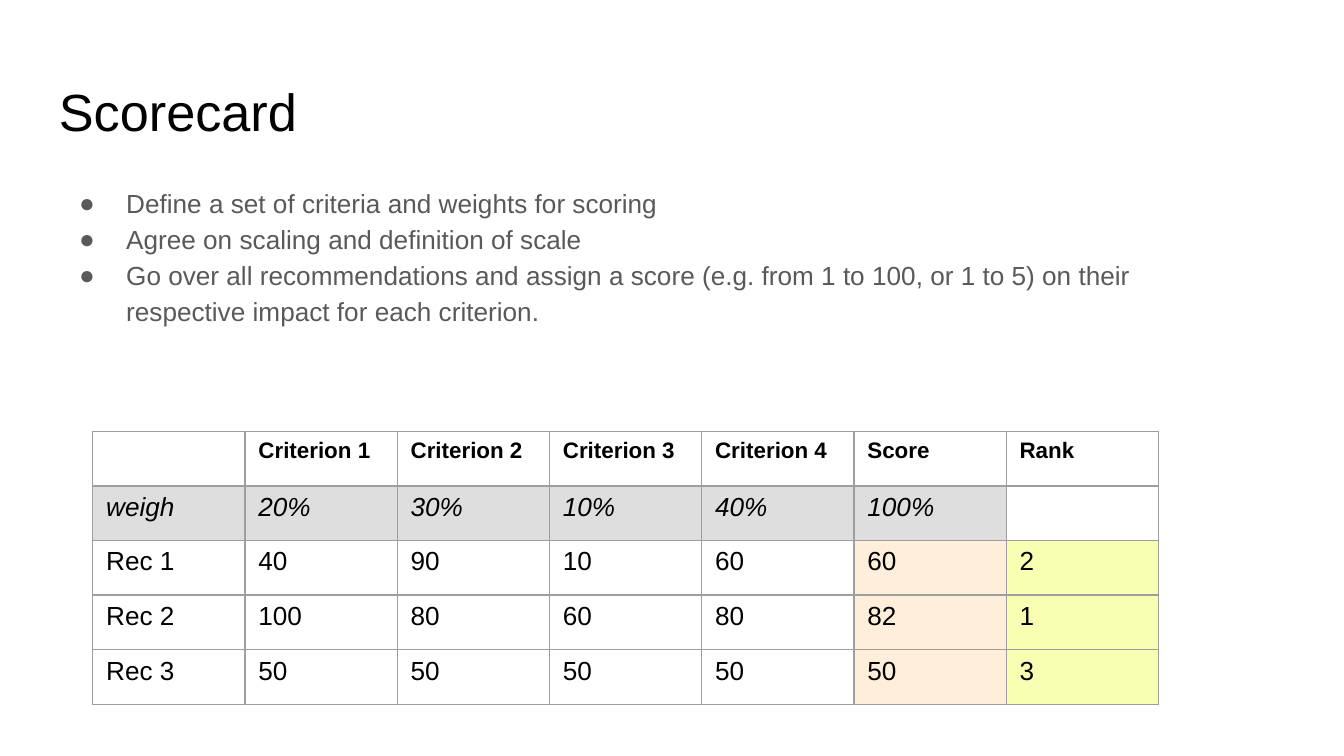
from dataclasses import dataclass

import pptx
import pptx.dml.color
import pptx.enum.text
import pptx.oxml
import pptx.oxml.ns
import pptx.text.text
import pptx.util

BLACK = pptx.dml.color.RGBColor(0x00, 0x00, 0x00)
BODY_GRAY = pptx.dml.color.RGBColor(0x59, 0x59, 0x59)
WEIGHT_GRAY = pptx.dml.color.RGBColor(0xDE, 0xDE, 0xDE)
SCORE_PEACH = pptx.dml.color.RGBColor(0xFF, 0xEE, 0xD9)
RANK_YELLOW = pptx.dml.color.RGBColor(0xF8, 0xFF, 0xB3)
BORDER_GRAY = pptx.dml.color.RGBColor(0x9E, 0x9E, 0x9E)

SCORE_COLUMN, RANK_COLUMN = 5, 6


@dataclass(frozen=True)
class TextStyle:
    size: float
    color: pptx.dml.color.RGBColor = BLACK
    bold: bool = False
    italic: bool = False


@dataclass(frozen=True)
class ScoreRow:
    values: tuple[str, ...]
    style: TextStyle
    fills: dict[int, pptx.dml.color.RGBColor]


TITLE_STYLE = TextStyle(28)
BULLET_STYLE = TextStyle(14, BODY_GRAY)
HEADER_STYLE = TextStyle(12, bold=True)
WEIGHT_STYLE = TextStyle(14, italic=True)
SCORE_STYLE = TextStyle(14)
RESULT_FILLS = {SCORE_COLUMN: SCORE_PEACH, RANK_COLUMN: RANK_YELLOW}

GUIDELINES = (
    "Define a set of criteria and weights for scoring",
    "Agree on scaling and definition of scale",
    "Go over all recommendations and assign a score (e.g. from 1 to 100, or 1 to 5) "
    "on their respective impact for each criterion.",
)
SCORECARD = (
    ScoreRow(("", "Criterion 1", "Criterion 2", "Criterion 3", "Criterion 4", "Score", "Rank"),
             HEADER_STYLE, {}),
    ScoreRow(("weigh", "20%", "30%", "10%", "40%", "100%", ""),
             WEIGHT_STYLE, dict.fromkeys(range(RANK_COLUMN), WEIGHT_GRAY)),
    ScoreRow(("Rec 1", "40", "90", "10", "60", "60", "2"), SCORE_STYLE, RESULT_FILLS),
    ScoreRow(("Rec 2", "100", "80", "60", "80", "82", "1"), SCORE_STYLE, RESULT_FILLS),
    ScoreRow(("Rec 3", "50", "50", "50", "50", "50", "3"), SCORE_STYLE, RESULT_FILLS),
)


def apply_style(font: pptx.text.text.Font, style: TextStyle) -> None:
    formats = {"name": "Arial", "size": pptx.util.Pt(style.size),
               "bold": style.bold, "italic": style.italic}
    for attribute, value in formats.items():
        setattr(font, attribute, value)
    font.color.rgb = style.color


def add_text(slide, left: float, top: float, width: float, height: float,
             lines: tuple[str, ...], style: TextStyle) -> pptx.text.text.TextFrame:
    bounds = (pptx.util.Inches(length) for length in (left, top, width, height))
    frame = slide.shapes.add_textbox(*bounds).text_frame
    formats = {"word_wrap": True, "vertical_anchor": pptx.enum.text.MSO_ANCHOR.TOP}
    formats |= {f"margin_{side}": pptx.util.Inches(0.1)
                for side in ("left", "top", "right", "bottom")}
    for attribute, value in formats.items():
        setattr(frame, attribute, value)
    frame.text = "\n".join(lines)
    for paragraph in frame.paragraphs:
        apply_style(paragraph.runs[0].font, style)
    return frame


def add_bullet(paragraph, color: pptx.dml.color.RGBColor) -> None:
    paragraph.line_spacing = 1.15
    properties = paragraph._p.get_or_add_pPr()
    properties.set("marL", str(pptx.util.Inches(0.5)))
    properties.set("indent", str(pptx.util.Inches(-0.35)))
    namespace = pptx.oxml.ns.nsdecls("a")
    for markup in (f'<a:buClr {namespace}><a:srgbClr val="{color}"/></a:buClr>',
                   f'<a:buFont {namespace} typeface="Arial"/>',
                   f'<a:buChar {namespace} char="●"/>'):
        properties.append(pptx.oxml.parse_xml(markup))


def add_borders(cell) -> None:
    """Draw a thin line on all four sides; lines must precede the cell fill."""
    properties = cell._tc.get_or_add_tcPr()
    for position, side in enumerate(("lnL", "lnR", "lnT", "lnB")):
        properties.insert(position, pptx.oxml.parse_xml(
            f'<a:{side} {pptx.oxml.ns.nsdecls("a")} w="{pptx.util.Pt(0.75)}"><a:solidFill>'
            f'<a:srgbClr val="{BORDER_GRAY}"/></a:solidFill></a:{side}>'))


def fill_cell(cell, value: str, style: TextStyle,
              fill: pptx.dml.color.RGBColor | None) -> None:
    formats = {"margin_left": pptx.util.Inches(0.1), "margin_right": pptx.util.Inches(0.1),
               "margin_top": pptx.util.Inches(0.05), "margin_bottom": pptx.util.Inches(0.05),
               "vertical_anchor": pptx.enum.text.MSO_ANCHOR.TOP, "text": value}
    for attribute, setting in formats.items():
        setattr(cell, attribute, setting)
    for run in cell.text_frame.paragraphs[0].runs:
        apply_style(run.font, style)
    if fill is None:
        cell.fill.background()
    else:
        cell.fill.solid()
        cell.fill.fore_color.rgb = fill
    add_borders(cell)


def add_scorecard(slide, left: float, top: float, width: float, height: float,
                  rows: tuple[ScoreRow, ...]) -> None:
    column_count = len(rows[0].values)
    bounds = (pptx.util.Inches(length) for length in (left, top, width, height))
    table = slide.shapes.add_table(len(rows), column_count, *bounds).table
    table.first_row = table.horz_banding = False
    for row_index, row in enumerate(rows):
        for column_index, value in enumerate(row.values):
            fill_cell(table.cell(row_index, column_index), value, row.style,
                      row.fills.get(column_index))


def main() -> None:
    presentation = pptx.Presentation()
    presentation.slide_width = pptx.util.Inches(10)
    presentation.slide_height = presentation.slide_width * 9 // 16
    slide = presentation.slides.add_slide(presentation.slide_layouts[6])

    add_text(slide, 0.34, 0.49, 9.32, 0.63, ("Scorecard",), TITLE_STYLE)
    guidelines = add_text(slide, 0.34, 1.26, 8.28, 3.74, GUIDELINES, BULLET_STYLE)
    for guideline in guidelines.paragraphs:
        add_bullet(guideline, BODY_GRAY)
    add_scorecard(slide, 0.69, 3.21, 7.93, 2.03, SCORECARD)

    presentation.save("out.pptx")


if __name__ == "__main__":
    main()
